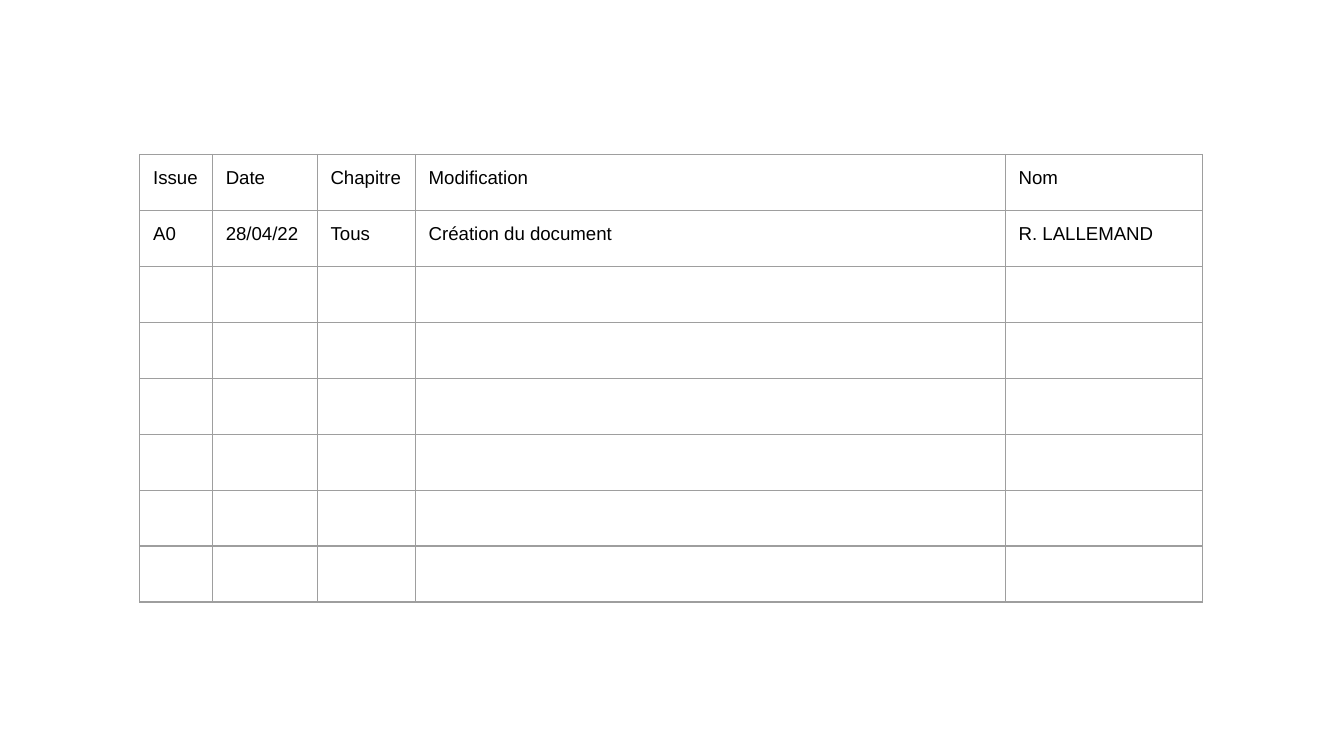
from dataclasses import dataclass

from lxml import etree
from pptx import Presentation
from pptx.dml.color import RGBColor
from pptx.oxml.ns import qn
from pptx.slide import Slide
from pptx.table import _Cell
from pptx.util import Inches, Pt

# Widescreen page, 16 by 9
SLIDE_WIDTH = Inches(10)
SLIDE_HEIGHT = SLIDE_WIDTH * 9 // 16
COLORS = {"text": "000000", "border": "9E9E9E", "cell": "FFFFFF"}
FONT = {"name": "Arial", "size": Pt(10)}
MARGINS = {f"margin_{side}": Inches(0.1) for side in ("left", "right", "top", "bottom")}
BORDER_WIDTH = Pt(0.75)
BORDER_TAGS = ("a:lnL", "a:lnR", "a:lnT", "a:lnB")

# Table place and row height
LEFT, TOP = Inches(1.04), Inches(1.15)
ROW_COUNT = 8
ROW_HEIGHT = Inches(3.33 / ROW_COUNT)


@dataclass(frozen=True)
class Column:
    title: str
    width: float
    entries: tuple[str, ...]


COLUMNS = (
    Column("Issue", 0.54, ("A0",)),
    Column("Date", 0.78, ("28/04/22",)),
    Column("Chapitre", 0.73, ("Tous",)),
    Column("Modification", 4.39, ("Création du document",)),
    Column("Nom", 1.47, ("R. LALLEMAND",)),
)


def set_format(target: object, values: dict) -> None:
    for name, value in values.items():
        setattr(target, name, value)


def style_cell(cell: _Cell) -> None:
    """Give a cell its four borders and its fill."""
    properties = cell._tc.get_or_add_tcPr()
    for tag in BORDER_TAGS:
        line = etree.SubElement(properties, qn(tag), w=str(BORDER_WIDTH))
        fill = etree.SubElement(line, qn("a:solidFill"))
        etree.SubElement(fill, qn("a:srgbClr"), val=COLORS["border"])
    cell.fill.solid()
    cell.fill.fore_color.rgb = RGBColor.from_string(COLORS["cell"])


def write_cell(cell: _Cell, text: str) -> None:
    set_format(cell, MARGINS)
    span = cell.text_frame.paragraphs[0].add_run()
    span.text = text
    set_format(span.font, FONT)
    span.font.color.rgb = RGBColor.from_string(COLORS["text"])


def add_revision_table(page: Slide) -> None:
    width = Inches(sum(column.width for column in COLUMNS))
    frame = page.shapes.add_table(
        ROW_COUNT, len(COLUMNS), LEFT, TOP, width, ROW_HEIGHT * ROW_COUNT
    )
    table = frame.table
    set_format(table, {"first_row": False, "horz_banding": False})
    for row in table.rows:
        row.height = ROW_HEIGHT
    for cell in table.iter_cells():
        style_cell(cell)
    for index, column in enumerate(COLUMNS):
        table.columns[index].width = Inches(column.width)
        for row_index, text in enumerate((column.title, *column.entries)):
            write_cell(table.cell(row_index, index), text)


def main() -> None:
    deck = Presentation()
    set_format(deck, {"slide_width": SLIDE_WIDTH, "slide_height": SLIDE_HEIGHT})
    page = deck.slides.add_slide(deck.slide_layouts[6])
    add_revision_table(page)
    deck.save("out.pptx")


if __name__ == "__main__":
    main()
